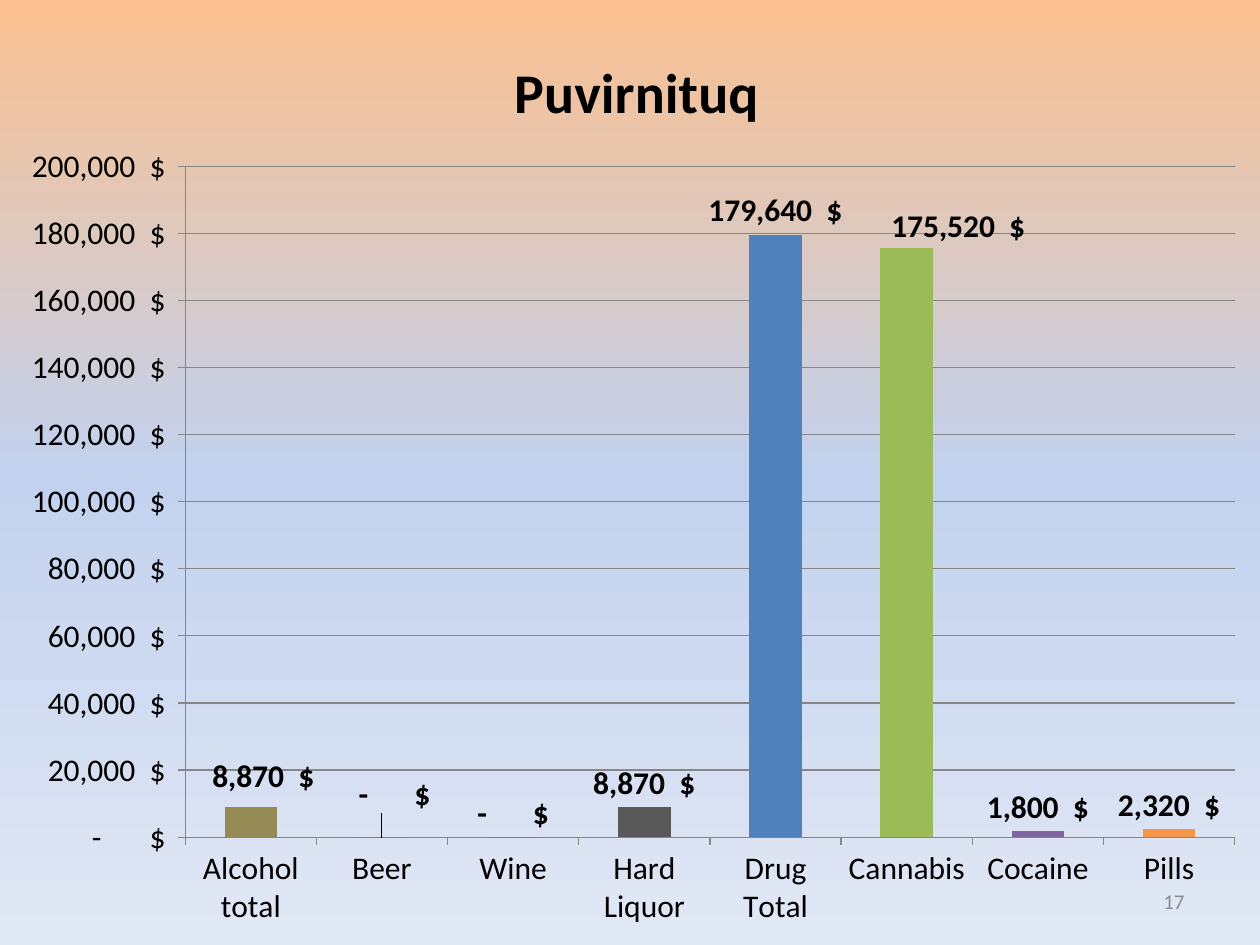
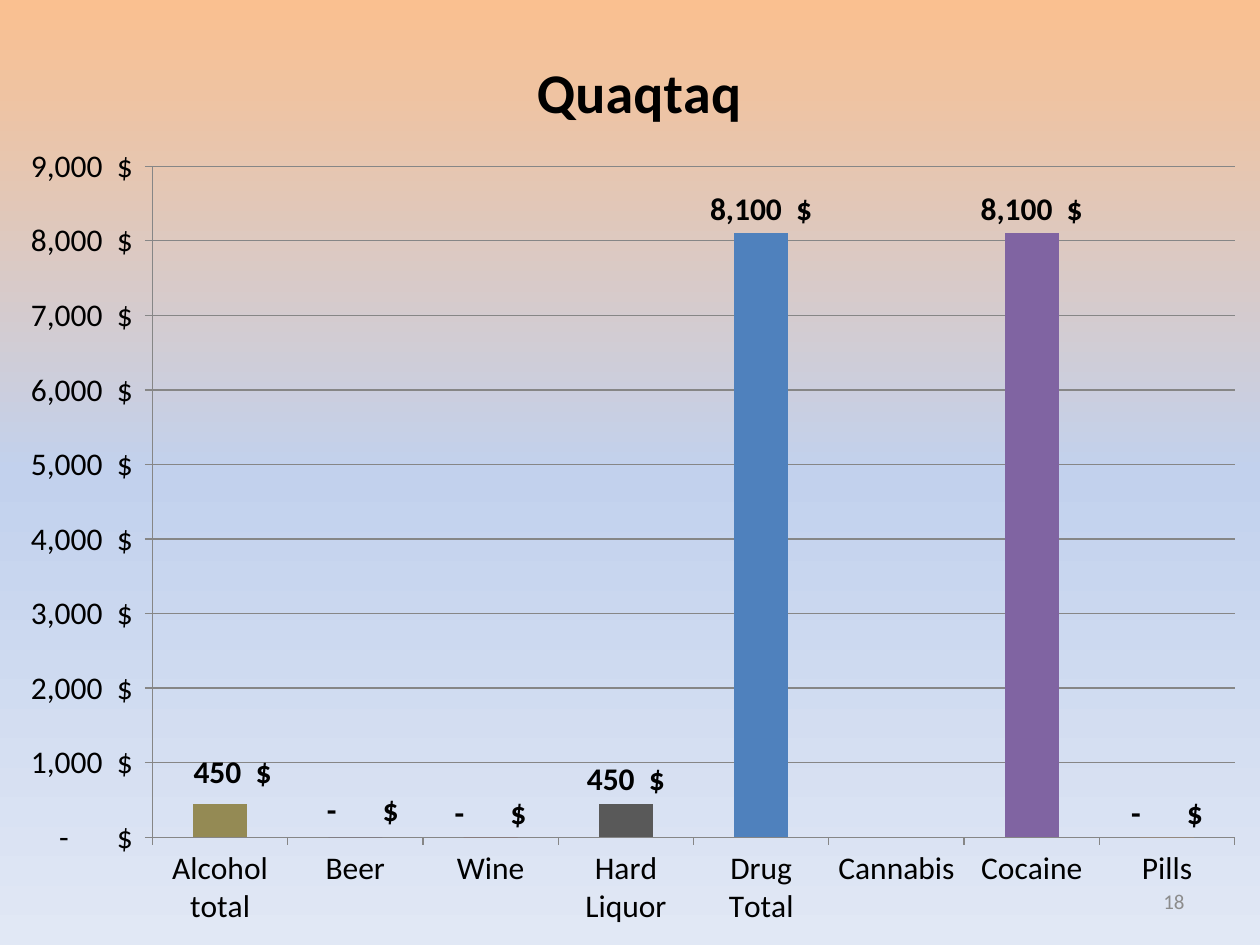
from lxml import etree
from pptx import Presentation
from pptx.chart.data import CategoryChartData
from pptx.dml.color import RGBColor
from pptx.enum.chart import XL_CHART_TYPE, XL_LABEL_POSITION, XL_TICK_MARK
from pptx.enum.text import MSO_ANCHOR, PP_ALIGN
from pptx.oxml.ns import qn
from pptx.util import Inches, Pt

FONT = "Calibri"
BLACK, GRID, NUMBER_GRAY = "000000", "868686", "8C8C8C"
BACKGROUND = [(0, "FAC090"), (50, "C2D1ED"), (100, "E1E8F5")]
MONEY = ('_ * #,##0_)\\ "$"_ ;_ * \\(#,##0\\)\\ "$"_ ;'
         '_ * "-"??_)\\ "$"_ ;_ @_ ')

CATEGORIES = ["Alcohol total", "Beer", "Wine", "Hard Liquor",
              "Drug Total", "Cannabis", "Cocaine", "Pills"]
BAR_COLORS = ["948A54", "604A7B", "953735", "595959",
              "4F81BD", "9BBB59", "8064A2", "F79646"]

# Positions are fractions of the chart; label_shifts are keyed by bar index
VILLAGES = [
    dict(name="Puvirnituq", number=17, top=200000, step=20000,
         values=[8870, 0, 0, 8870, 179640, 175520, 1800, 2320],
         title_x=0.40, plot_x=0.147,
         label_shifts={0: (0.01, -0.008), 1: (0.01, -0.02), 5: (0.041, 0.002)}),
    dict(name="Quaqtaq", number=18, top=9000, step=1000,
         values=[450, 0, 0, 450, 8100, None, 8100, 0],
         title_x=0.418, plot_x=0.121,
         label_shifts={0: (0.01, -0.008), 1: (0.006, -0.003)}),
]
PLOT_RIGHT, PLOT_Y, PLOT_H = 0.98, 0.176, 0.71


def rgb(color):
    return RGBColor.from_string(color)


def style_font(font, size, color=BLACK, bold=False):
    font.name, font.size, font.bold = FONT, Pt(size), bold
    font.color.rgb = rgb(color)


def place(element, index, **settings):
    """Give a chart part a manual layout at the given child index."""
    for old in element.findall(qn("c:layout")):
        element.remove(old)
    layout = etree.Element(qn("c:layout"))
    manual = etree.SubElement(layout, qn("c:manualLayout"))
    for tag, value in settings.items():
        etree.SubElement(manual, qn("c:" + tag)).set("val", str(value))
    element.insert(index, layout)


class Deck:
    def __init__(self):
        self.prs = Presentation()
        self.prs.slide_width, self.prs.slide_height = Inches(10), Inches(7.5)
        self.s = None

    def new_slide(self):
        self.s = self.prs.slides.add_slide(self.prs.slide_layouts[6])
        fill = self.s.background.fill
        fill.gradient()
        fill.gradient_angle = 270
        stops = self.s.element.find(".//" + qn("a:gsLst"))
        for old in list(stops):
            stops.remove(old)
        for percent, color in BACKGROUND:
            stop = etree.SubElement(stops, qn("a:gs"), pos=str(percent * 1000))
            etree.SubElement(stop, qn("a:srgbClr"), val=color)

    def column_chart(self, village):
        data = CategoryChartData(number_format=MONEY)
        data.categories = CATEGORIES
        data.add_series(village["name"], village["values"])
        chart = self.s.shapes.add_chart(
            XL_CHART_TYPE.COLUMN_CLUSTERED, 0, 0,
            Inches(10), Inches(7.5), data).chart
        style_font(chart.font, 18)
        chart.has_legend = False
        self.chart_title(chart, village)
        self.axes(chart, village)
        self.bars(chart.plots[0], village["label_shifts"])
        x = village["plot_x"]
        place(chart.element.find(".//" + qn("c:plotArea")), 0,
              layoutTarget="inner", xMode="edge", yMode="edge",
              x=x, y=PLOT_Y, w=round(PLOT_RIGHT - x, 3), h=PLOT_H)

    def chart_title(self, chart, village):
        chart.has_title = True
        tf = chart.chart_title.text_frame
        tf.text = village["name"]
        style_font(tf.paragraphs[0].runs[0].font, 32, bold=True)
        place(chart.element.find(".//" + qn("c:title")), 1,
              xMode="edge", yMode="edge", x=village["title_x"], y=0.045)

    def axes(self, chart, village):
        value_axis = chart.value_axis
        value_axis.minimum_scale = 0
        value_axis.maximum_scale = village["top"]
        value_axis.major_unit = village["step"]
        value_axis.has_major_gridlines = True
        value_axis.tick_labels.number_format = MONEY
        value_axis.tick_labels.number_format_is_linked = False
        for axis in (value_axis, chart.category_axis):
            axis.major_tick_mark = XL_TICK_MARK.OUTSIDE
            style_font(axis.tick_labels.font, 18)
        for part in (value_axis, chart.category_axis, value_axis.major_gridlines):
            part.format.line.color.rgb = rgb(GRID)
            part.format.line.width = Pt(0.75)

    def bars(self, plot, label_shifts):
        plot.gap_width = 150
        plot.vary_by_categories = False
        series = plot.series[0]
        for i, color in enumerate(BAR_COLORS):
            fill = series.points[i].format.fill
            fill.solid()
            fill.fore_color.rgb = rgb(color)
        labels = series.data_labels
        labels.show_value = True
        labels.number_format = MONEY
        labels.number_format_is_linked = False
        labels.position = XL_LABEL_POSITION.OUTSIDE_END
        style_font(labels.font, 18, bold=True)

        # Labels moved off their usual place
        for i in label_shifts:
            label = series.points[i].data_label
            style_font(label.font, 18, bold=True)
            label.position = XL_LABEL_POSITION.OUTSIDE_END
        for d_lbl in plot.series[0].data_labels._element.findall(qn("c:dLbl")):
            x, y = label_shifts[int(d_lbl.find(qn("c:idx")).get("val"))]
            place(d_lbl, 1, x=x, y=y)
            d_lbl.insert(2, etree.Element(
                qn("c:numFmt"), formatCode=MONEY, sourceLinked="0"))

    def slide_number(self, number):
        tf = self.s.shapes.add_textbox(
            Inches(7.17), Inches(6.95), Inches(2.33), Inches(0.4)).text_frame
        tf.word_wrap = True
        tf.vertical_anchor = MSO_ANCHOR.MIDDLE
        p = tf.paragraphs[0]
        p.text = str(number)
        p.alignment = PP_ALIGN.RIGHT
        style_font(p.runs[0].font, 12, NUMBER_GRAY)


def main():
    deck = Deck()
    for village in VILLAGES:
        deck.new_slide()
        deck.column_chart(village)
        deck.slide_number(village["number"])
    deck.prs.save("out.pptx")


if __name__ == "__main__":
    main()
